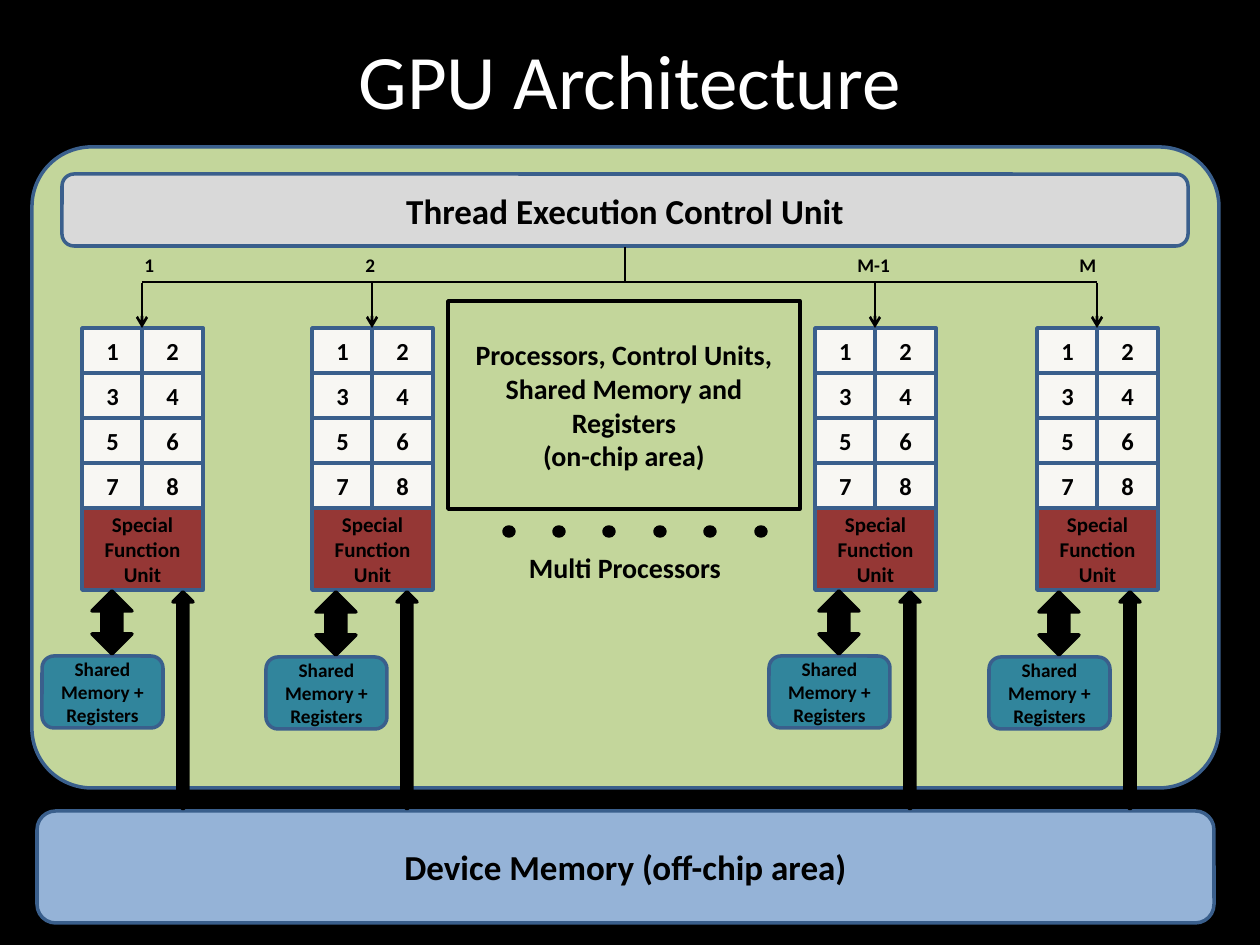
from dataclasses import dataclass
from lxml.etree import SubElement
from pptx import Presentation
from pptx.dml.color import RGBColor
from pptx.enum.shapes import MSO_CONNECTOR, MSO_SHAPE
from pptx.enum.text import MSO_ANCHOR, PP_ALIGN
from pptx.oxml.ns import qn
from pptx.util import Emu, Pt


@dataclass
class Theme:
    font: str = "Calibri"
    black: str = "000000"
    white: str = "FFFFFF"
    edge: str = "3A5F8C"
    chip: str = "C3D69B"
    cell: str = "F8F7F3"
    unit: str = "953735"
    store: str = "31859C"
    control: str = "D9D9D9"
    device: str = "95B3D7"
    title: int = 44
    head: int = 20
    note: int = 16
    digit: int = 14
    body: int = 12
    small: int = 11
    line: float = 2
    wire: float = 1.5


theme = Theme()
scale = 914400 / 126


def write(shape, text, size, color=theme.black, bold=True, align=PP_ALIGN.CENTER):
    frame = shape.text_frame
    frame.text = text
    frame.word_wrap = True
    for para in frame.paragraphs:
        para.alignment = align
        para.font.name = theme.font
        para.font.size = Pt(size)
        para.font.bold = bold
        para.font.color.rgb = RGBColor.from_string(color)


def draw(kind, box, fill, edge=theme.edge, text="", size=theme.body):
    shape = slide.shapes.add_shape(kind, *[Emu(round(n * scale)) for n in box])
    shape.shadow.inherit = False
    if fill:
        shape.fill.solid()
        shape.fill.fore_color.rgb = RGBColor.from_string(fill)
    else:
        shape.fill.background()
    shape.line.color.rgb = RGBColor.from_string(edge)
    shape.line.width = Pt(theme.line)
    if text:
        shape.text_frame.vertical_anchor = MSO_ANCHOR.MIDDLE
        write(shape, text, size)
    return shape


deck = Presentation()
deck.slide_width = Emu(round(1260 * scale))
deck.slide_height = Emu(round(945 * scale))
slide = deck.slides.add_slide(deck.slide_layouts[5])
slide.background.fill.solid()
slide.background.fill.fore_color.rgb = RGBColor.from_string(theme.black)

title = slide.shapes.title
title.left, title.top, title.width, title.height = [
    Emu(round(n * scale)) for n in (63, 0, 1134, 158)]
title.text_frame.vertical_anchor = MSO_ANCHOR.MIDDLE
write(title, "GPU Architecture", theme.title, theme.white, False)

chip = draw(MSO_SHAPE.ROUNDED_RECTANGLE, (32, 147, 1187, 641), theme.chip)
chip.adjustments[0] = 0.093
draw(MSO_SHAPE.ROUNDED_RECTANGLE, (62, 174, 1126, 72), theme.control,
     text="Thread Execution Control Unit", size=theme.head)
draw(MSO_SHAPE.ROUNDED_RECTANGLE, (37, 811, 1177, 112), theme.device,
     text="Device Memory (off-chip area)", size=theme.head)

cores = [(82, 42, 0), (312, 266, 1), (815, 769, 0), (1037, 989, 1)]
for left, store, slip in cores:
    for i in range(8):
        row, col = divmod(i, 2)
        draw(MSO_SHAPE.RECTANGLE, (left + col * 60, 328 + row * 45, 61, 45),
             theme.cell, text=str(i + 1), size=theme.digit)
    draw(MSO_SHAPE.RECTANGLE, (left, 508, 121, 82), theme.unit,
         text="Special Function Unit")
    draw(MSO_SHAPE.ROUNDED_RECTANGLE, (store, 656 + slip, 121, 72), theme.store,
         text="Shared Memory + Registers", size=theme.small)
    draw(MSO_SHAPE.UP_DOWN_ARROW, (store + 50, 591 + slip, 40, 63),
         theme.black, theme.black)
    draw(MSO_SHAPE.UP_DOWN_ARROW, (store + 131, 592, 20, 217),
         theme.black, theme.black)

wires = [(625, 247, 625, 282, False), (142, 282, 1097, 282, False)]
wires += [(left + 60, 283, left + 60, 328, True) for left, _, _ in cores]
for *ends, head in wires:
    wire = slide.shapes.add_connector(
        MSO_CONNECTOR.STRAIGHT, *[Emu(round(n * scale)) for n in ends])
    wire.line.color.rgb = RGBColor.from_string(theme.black)
    wire.line.width = Pt(theme.wire)
    if head:
        SubElement(wire.line._get_or_add_ln(), qn("a:tailEnd"), type="arrow")
    SubElement(wire._element.spPr, qn("a:effectLst"))

for i in range(6):
    draw(MSO_SHAPE.OVAL, (504 + i * 504 // 10, 527, 10, 9), theme.black, theme.black)

draw(MSO_SHAPE.RECTANGLE, (448, 301, 352, 208), None, theme.black,
     "Processors, Control Units, Shared Memory and Registers\n(on-chip area)",
     theme.note)

labels = [
    ("1", (132, 247, 40, 36), theme.small, PP_ALIGN.LEFT),
    ("2", (353, 247, 40, 36), theme.small, PP_ALIGN.LEFT),
    ("M-1", (845, 247, 71, 36), theme.small, PP_ALIGN.LEFT),
    ("M", (1067, 247, 42, 36), theme.small, PP_ALIGN.LEFT),
    ("Multi Processors", (444, 544, 362, 47), theme.note, PP_ALIGN.CENTER),
]
for text, box, size, align in labels:
    label = slide.shapes.add_textbox(*[Emu(round(n * scale)) for n in box])
    write(label, text, size, align=align)

deck.save("out.pptx")
